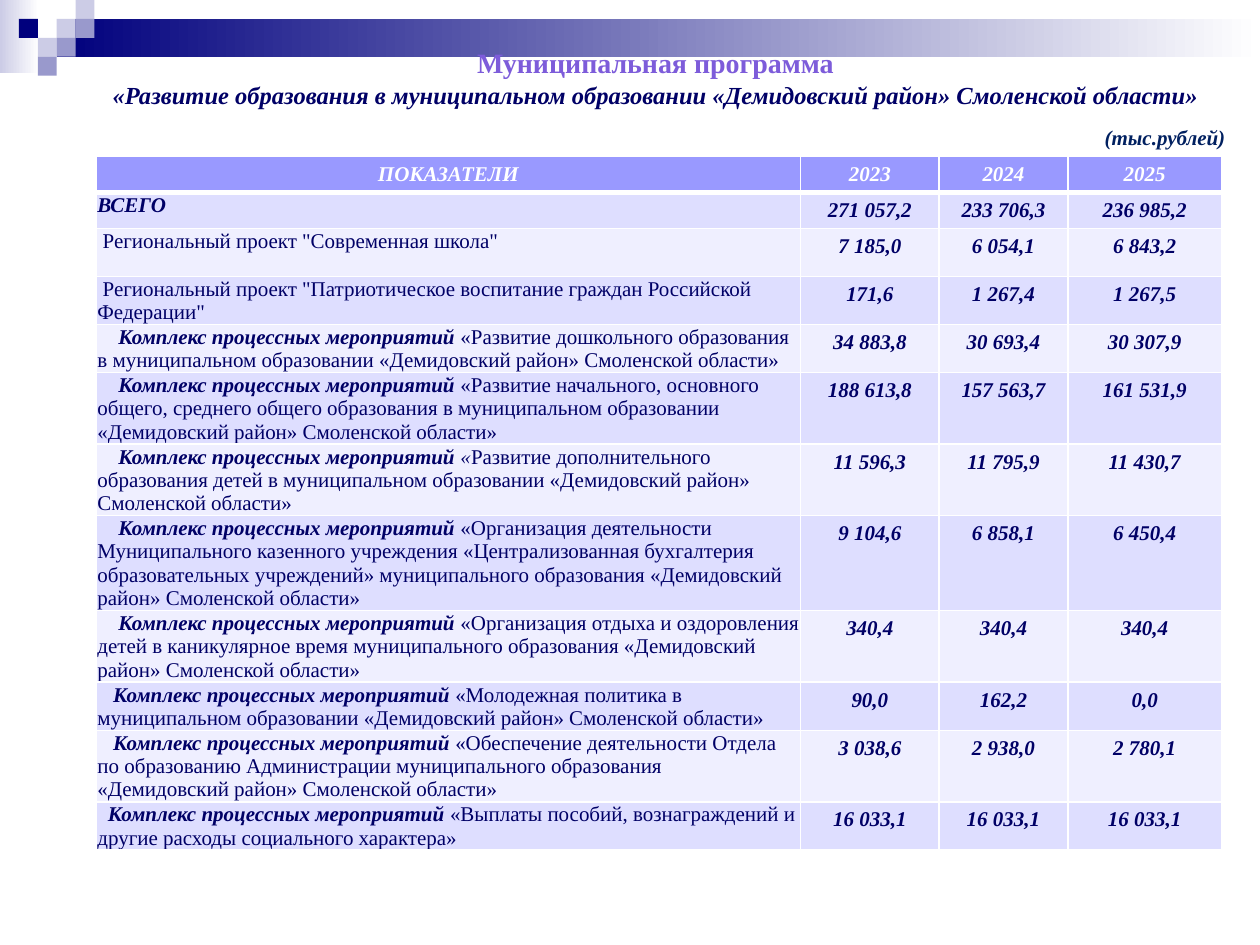
from typing import NamedTuple

from lxml.etree import SubElement
from pptx import Presentation
from pptx.dml.color import RGBColor
from pptx.enum.shapes import MSO_SHAPE
from pptx.enum.text import MSO_ANCHOR, PP_ALIGN
from pptx.oxml.ns import qn
from pptx.util import Pt

COLORS = {
    "navy": "00007D", "mid": "9999CC", "light": "CCCCE6", "white": "FFFFFF",
    "header": "9999FF", "odd": "DEDEFF", "even": "EFEFFF",
    "title": "7D5CDA", "text": "000066", "unit": "002060",
}
FONT = "Times New Roman"
STEP = 10.8  # side of a decorative square
LINE = 13.4  # height of a 12 pt text line
COLUMNS = (402.5, 79.2, 73.5, 87.9)
MEASURES = "Комплекс процессных мероприятий "
DISTRICT = "«Демидовский район» Смоленской области»"


class Square(NamedTuple):
    col: int
    row: int
    color: str


class Row(NamedTuple):
    lines: int
    indent: float
    lead: str  # bold italic
    mark: str  # italic
    body: str  # regular
    values: tuple[str, str, str]


SQUARES = [
    Square(3, 1, "light"), Square(4, 0, "light"), Square(4, 1, "mid"),
    Square(2, 2, "light"), Square(1, 1, "navy"), Square(3, 2, "mid"),
    Square(2, 3, "mid"),
]
ROWS = [
    Row(2, 3, "", "", 'Региональный проект "Современная школа"',
        ("7 185,0", "6 054,1", "6 843,2")),
    Row(2, 3, "", "", 'Региональный проект "Патриотическое воспитание граждан '
        'Российской Федерации"', ("171,6", "1 267,4", "1 267,5")),
    Row(2, 12, MEASURES, "", "«Развитие дошкольного образования в муниципальном "
        f"образовании {DISTRICT}", ("34 883,8", "30 693,4", "30 307,9")),
    Row(3, 12, MEASURES, "", "«Развитие начального, основного общего, среднего общего "
        f"образования в муниципальном образовании {DISTRICT}",
        ("188 613,8", "157 563,7", "161 531,9")),
    Row(3, 12, MEASURES, "«", "Развитие дополнительного образования детей в "
        f"муниципальном образовании {DISTRICT}",
        ("11 596,3", "11 795,9", "11 430,7")),
    Row(4, 12, MEASURES, "", "«Организация деятельности Муниципального казенного "
        "учреждения «Централизованная бухгалтерия образовательных учреждений» "
        f"муниципального образования {DISTRICT}", ("9 104,6", "6 858,1", "6 450,4")),
    Row(3, 12, MEASURES, "", "«Организация отдыха и оздоровления детей в каникулярное "
        f"время муниципального образования {DISTRICT}", ("340,4", "340,4", "340,4")),
    Row(2, 9, MEASURES, "", "«Молодежная политика в муниципальном образовании "
        f"{DISTRICT}", ("90,0", "162,2", "0,0")),
    Row(3, 9, MEASURES, "", "«Обеспечение деятельности Отдела по образованию "
        f"Администрации муниципального образования {DISTRICT}",
        ("3 038,6", "2 938,0", "2 780,1")),
    Row(2, 6, MEASURES, "", "«Выплаты пособий, вознаграждений и другие расходы "
        "социального характера»", ("16 033,1", "16 033,1", "16 033,1")),
]


def rgb(name: str) -> RGBColor:
    return RGBColor.from_string(COLORS[name])


def add_rect(s, x: float, y: float, w: float, h: float, color: str, fade: bool = False) -> None:
    sp = s.shapes.add_shape(MSO_SHAPE.RECTANGLE, Pt(x), Pt(y), Pt(w), Pt(h))
    sp.shadow.inherit = False
    sp.line.fill.background()
    if fade:
        sp.fill.gradient()
        sp.fill.gradient_angle = 0
        for stop, name in zip(sp.fill.gradient_stops, (color, "white")):
            stop.color.rgb = rgb(name)
    else:
        sp.fill.solid()
        sp.fill.fore_color.rgb = rgb(color)


def add_run(p, text: str, color: str, size: float = 12, bold: bool = True,
            italic: bool = True) -> None:
    r = p.add_run()
    r.text = text
    r.font.name, r.font.size = FONT, Pt(size)
    r.font.bold, r.font.italic = bold, italic
    r.font.color.rgb = rgb(color)


def style_cell(cell, fill: str, bottom: float = 1, top: float = 1) -> None:
    cell.fill.solid()
    cell.fill.fore_color.rgb = rgb(fill)
    tc_pr = cell._tc.get_or_add_tcPr()
    widths = {"a:lnL": 1, "a:lnR": 1, "a:lnT": top, "a:lnB": bottom}
    for i, (tag, width) in enumerate(widths.items()):
        ln = SubElement(tc_pr, qn(tag), w=str(Pt(width)))
        SubElement(SubElement(ln, qn("a:solidFill")), qn("a:srgbClr"), val=COLORS["white"])
        tc_pr.insert(i, ln)  # borders come before the fill


def fill_centered(cell, text: str, color: str) -> None:
    p = cell.text_frame.paragraphs[0]
    p.alignment = PP_ALIGN.CENTER
    add_run(p, text, color)


def fill_label(cell, row: Row) -> None:
    cell.margin_left = cell.margin_right = cell.margin_top = Pt(0.7)
    cell.margin_bottom = Pt(0)
    p = cell.text_frame.paragraphs[0]
    p._p.get_or_add_pPr().set("indent", str(Pt(row.indent)))
    for text, bold, italic in ((row.lead, True, True), (row.mark, False, True),
                               (row.body, False, False)):
        if text:
            add_run(p, text, "text", bold=bold, italic=italic)


def add_programme_table(s) -> None:
    total = Row(1, 0, "ВСЕГО", "", "", ("271 057,2", "233 706,3", "236 985,2"))
    rows = [total, *ROWS]
    heights = [20.6, 20.6] + [LINE * row.lines + 0.7 for row in ROWS]
    table = s.shapes.add_table(len(heights), len(COLUMNS), Pt(55), Pt(89.3),
                               Pt(sum(COLUMNS)), Pt(sum(heights))).table
    for column, width in zip(table.columns, COLUMNS):
        column.width = Pt(width)
    for line, height in zip(table.rows, heights):
        line.height = Pt(height)
    for c, text in enumerate(("ПОКАЗАТЕЛИ", "2023", "2024", "2025")):
        style_cell(table.cell(0, c), "header", bottom=3)
        fill_centered(table.cell(0, c), text, "white")
    for i, row in enumerate(rows, start=1):
        for c in range(len(COLUMNS)):
            style_cell(table.cell(i, c), "odd" if i % 2 else "even", top=3 if i == 1 else 1)
        fill_label(table.cell(i, 0), row)
        for c, value in enumerate(row.values, start=1):
            fill_centered(table.cell(i, c), value, "text")


def add_text_frame(s, x: float, y: float, w: float, h: float, wrap: bool):
    tf = s.shapes.add_textbox(Pt(x), Pt(y), Pt(w), Pt(h)).text_frame
    tf.word_wrap = wrap
    tf.vertical_anchor = MSO_ANCHOR.MIDDLE
    return tf


def main() -> None:
    prs = Presentation()
    prs.slide_width, prs.slide_height = Pt(720), Pt(540)
    s = prs.slides.add_slide(prs.slide_layouts[6])

    # Header band and squares
    add_rect(s, 0, 0, 22.3, 41.8, "light", fade=True)
    add_rect(s, 3 * STEP, STEP, 720 - 3 * STEP, 2 * STEP, "navy", fade=True)
    for sq in SQUARES:
        add_rect(s, sq.col * STEP, sq.row * STEP, STEP, STEP, sq.color)

    # Indicators by year
    add_programme_table(s)

    # Title
    tf = add_text_frame(s, 50.4, 22.3, 652.3, 44, wrap=True)
    p = tf.paragraphs[0]
    p.alignment = PP_ALIGN.CENTER
    add_run(p, "Муниципальная программа ", "title", 16, italic=False)
    p = tf.add_paragraph()
    p.alignment = PP_ALIGN.CENTER
    add_run(p, f"«Развитие образования в муниципальном образовании {DISTRICT} ", "text", 14)

    # Unit of measure
    tf = add_text_frame(s, 624.2, 67.7, 84.2, 21.6, wrap=False)
    add_run(tf.paragraphs[0], "(тыс.рублей)", "unit")

    prs.save("out.pptx")


if __name__ == "__main__":
    main()
